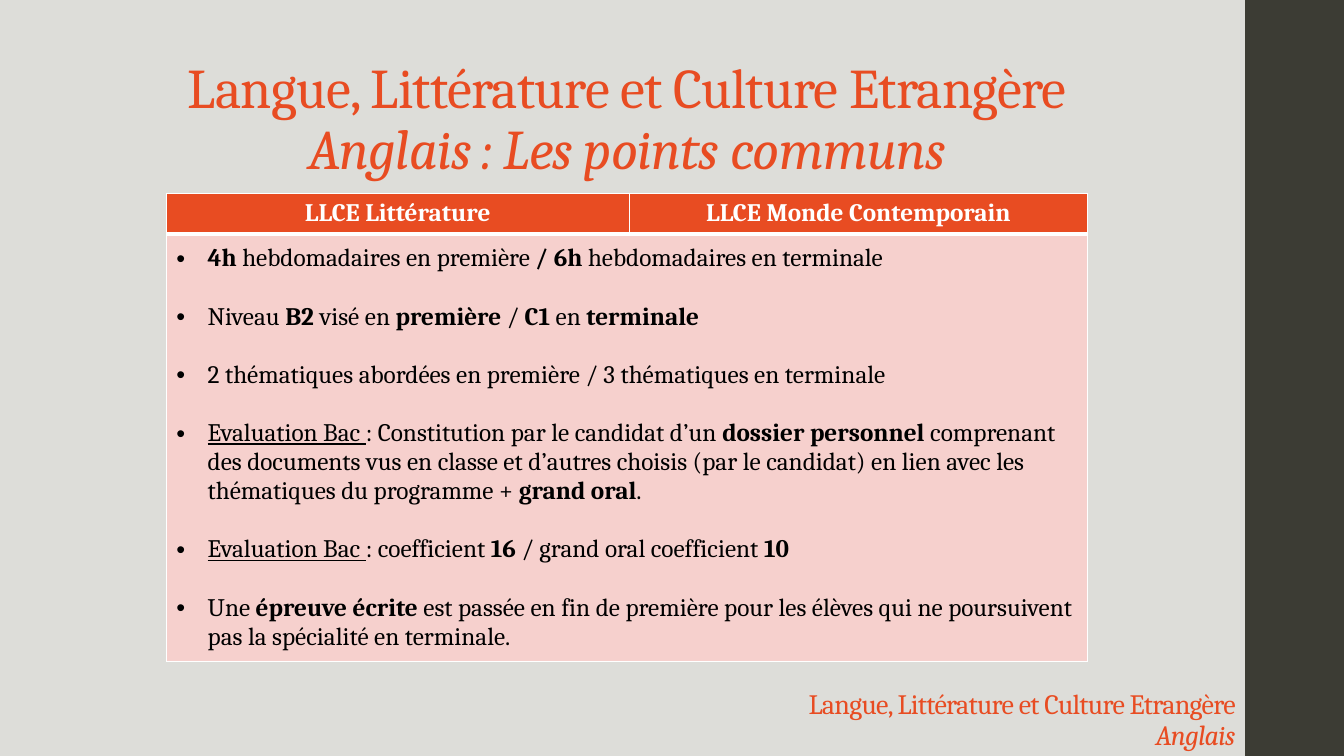
from lxml import etree
from pptx import Presentation
from pptx.dml.color import RGBColor
from pptx.enum import shapes, text
from pptx.oxml import ns
from pptx.util import Inches, Pt

PAPER = RGBColor(0xDD, 0xDD, 0xD9)
SLATE = RGBColor(0x3C, 0x3C, 0x34)
ORANGE = RGBColor(0xE8, 0x4C, 0x22)
PINK = RGBColor(0xF6, 0xD0, 0xCD)
WHITE = RGBColor(0xFF, 0xFF, 0xFF)
BLACK = RGBColor(0, 0, 0)

PLAIN, BOLD = {"bold": False}, {"bold": True}
UNDERLINE, ITALIC = {"underline": True}, {"italic": True}

SUBJECT = "Langue, Littérature et Culture Etrangère"
HEADERS = ["LLCE Littérature", "LLCE Monde Contemporain"]
COMMON_POINTS = [
    [("4h", BOLD), (" hebdomadaires en première", PLAIN), (" / 6h ", BOLD),
     ("hebdomadaires en terminale", PLAIN)],
    [("Niveau ", PLAIN), ("B2", BOLD), (" visé en ", PLAIN), ("première", BOLD),
     (" / ", PLAIN), ("C1", BOLD), (" en ", PLAIN), ("terminale", BOLD)],
    [("2 thématiques abordées en première / 3 thématiques en terminale", PLAIN)],
    [("Evaluation Bac ", UNDERLINE), (": Constitution par le candidat d’un ", PLAIN),
     ("dossier personnel ", BOLD),
     ("comprenant des documents vus en classe et d’autres choisis (par le candidat) "
      "en lien avec les thématiques du programme + ", PLAIN),
     ("grand oral", BOLD), (".", PLAIN)],
    [("Evaluation Bac ", UNDERLINE), (": coefficient ", PLAIN), ("16", BOLD),
     (" / grand oral coefficient ", PLAIN), ("10", BOLD)],
    [("Une ", PLAIN), ("épreuve écrite ", BOLD),
     ("est passée en fin de première pour les élèves qui ne poursuivent pas "
      "la spécialité en terminale.", PLAIN)],
]


class SlideBuilder:
    def __init__(self, slide, font="Cambria"):
        self.slide = slide
        self.font = font

    def background(self, color):
        fill = self.slide.background.fill
        fill.solid()
        fill.fore_color.rgb = color

    def band(self, left, top, width, height, color):
        band = self.slide.shapes.add_shape(
            shapes.MSO_SHAPE.RECTANGLE, *map(Inches, (left, top, width, height)))
        band.shadow.inherit = False
        band.fill.solid()
        band.fill.fore_color.rgb = color
        band.line.fill.background()

    def span(self, para, words, size, color, style):
        span = para.add_run()
        span.text = words
        span.font.color.rgb = color
        for name, value in {"name": self.font, "size": Pt(size), **style}.items():
            setattr(span.font, name, value)
        return span

    def heading(self, left, top, width, height, lines, size, align):
        """Add bottom-anchored, tightly spaced lines of (words, style)."""
        box = self.slide.shapes.add_textbox(*map(Inches, (left, top, width, height)))
        box.text_frame.word_wrap = True
        box.text_frame.vertical_anchor = text.MSO_ANCHOR.BOTTOM
        para = box.text_frame.paragraphs[0]
        para.alignment = align
        para.line_spacing = 0.9
        for index, (words, style) in enumerate(lines):
            if index:
                para.add_line_break()
            span = self.span(para, words, size, ORANGE, style)
            span.font._element.set("spc", "-50")

    def bullet(self, para, indent):
        properties = para._p.get_or_add_pPr()
        properties.set("marL", str(Inches(indent)))
        properties.set("indent", str(-Inches(indent)))
        for tag, name, value in (("a:buFont", "typeface", "Arial"),
                                 ("a:buChar", "char", "•")):
            etree.SubElement(properties, ns.qn(tag)).set(name, value)

    def cell_style(self, cell, color, bottom=1):
        """Fill a cell and give it white borders."""
        cell.vertical_anchor = text.MSO_ANCHOR.MIDDLE
        cell.fill.solid()
        cell.fill.fore_color.rgb = color
        properties = cell._tc.get_or_add_tcPr()
        widths = {"a:lnL": 1, "a:lnR": 1, "a:lnT": 1, "a:lnB": bottom}
        for index, (tag, width) in enumerate(widths.items()):
            border = etree.Element(ns.qn(tag), w=str(Pt(width)))
            fill = etree.SubElement(border, ns.qn("a:solidFill"))
            etree.SubElement(fill, ns.qn("a:srgbClr"), val=str(WHITE))
            properties.insert(index, border)

    def comparison(self, left, top, widths, heights, headers, points, size=18):
        """Add a table with a header row over one merged cell of bullets."""
        frame = self.slide.shapes.add_table(
            2, len(widths), *map(Inches, (left, top, sum(widths), sum(heights))))
        table = frame.table
        table.horz_banding = False
        for column, width in zip(table.columns, widths):
            column.width = Inches(width)
        for row, height in zip(table.rows, heights):
            row.height = Inches(height)
        for index, words in enumerate(headers):
            cell = table.cell(0, index)
            self.cell_style(cell, ORANGE, bottom=3)
            self.cell_style(table.cell(1, index), PINK)
            para = cell.text_frame.paragraphs[0]
            para.alignment = text.PP_ALIGN.CENTER
            self.span(para, words, size, WHITE, BOLD)

        body = table.cell(1, 0)
        body.merge(table.cell(1, len(widths) - 1))
        for index, spans in enumerate(points):
            frame = body.text_frame
            para = frame.add_paragraph() if index else frame.paragraphs[0]
            if index:
                para.space_before = Pt(20.8)
            self.bullet(para, 0.31)
            for words, style in spans:
                self.span(para, words, size, BLACK, {**PLAIN, **style})


def main():
    deck = Presentation()
    deck.slide_width, deck.slide_height = Inches(13.33), Inches(7.5)
    page = SlideBuilder(deck.slides.add_slide(deck.slide_layouts[6]))
    page.background(PAPER)
    page.band(12.35, 0, 0.98, 7.5, SLATE)
    page.heading(0.11, 0.4, 12.22, 1.45,
                 [(SUBJECT, {}), ("Anglais : Les points communs", ITALIC)],
                 40, text.PP_ALIGN.CENTER)
    page.comparison(1.65, 1.92, [4.59, 4.55], [0.38, 4.14], HEADERS, COMMON_POINTS)
    page.heading(0.13, 6.05, 12.22, 1.45,
                 [(SUBJECT, {}), ("Anglais", ITALIC)], 20, text.PP_ALIGN.RIGHT)
    deck.save("out.pptx")


if __name__ == "__main__":
    main()
